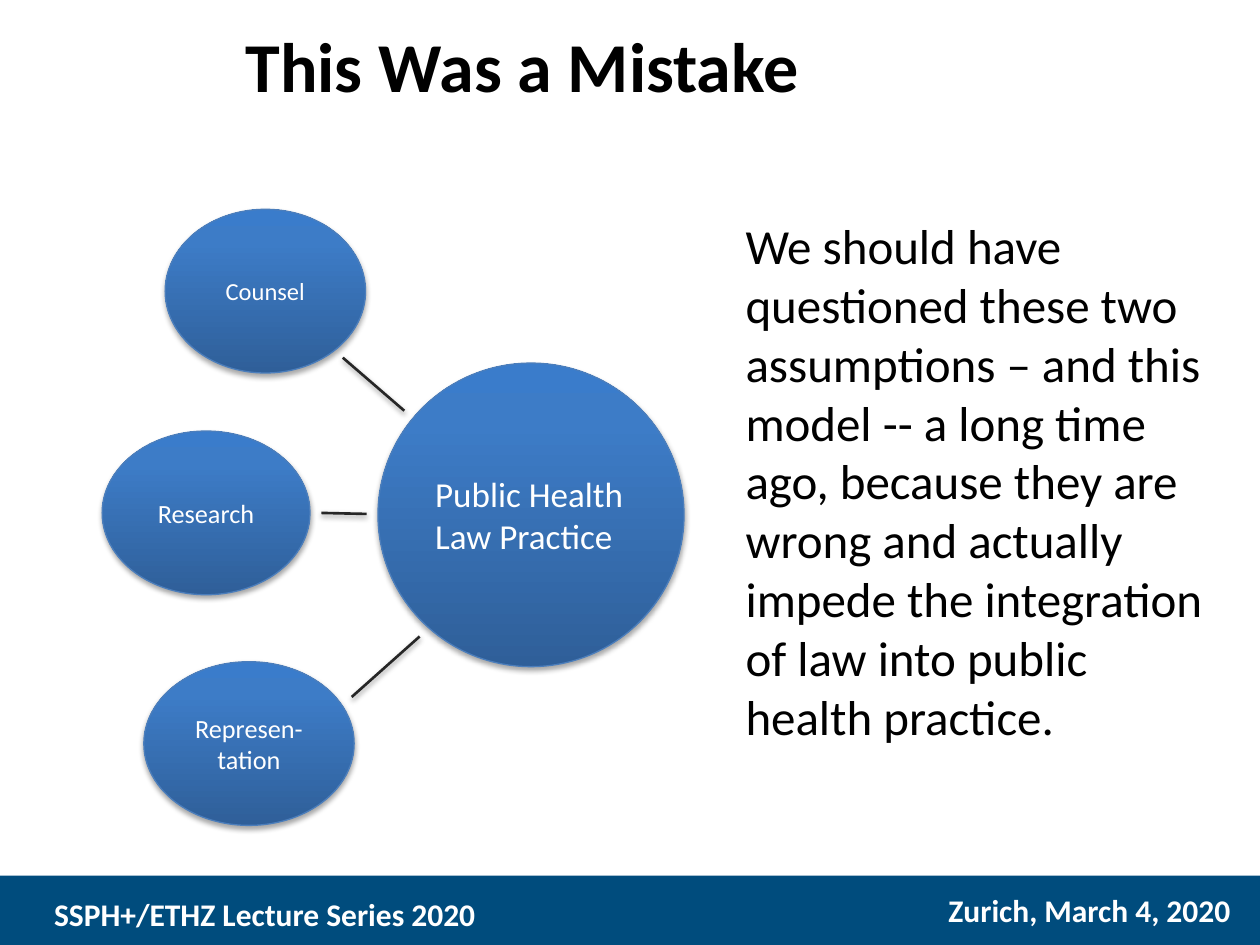
from dataclasses import dataclass

from copy import deepcopy
from lxml.etree import SubElement
from pptx import Presentation
from pptx.dml.color import RGBColor as RGB
from pptx.enum.shapes import MSO_CONNECTOR as CONN, MSO_SHAPE as SHAPE
from pptx.enum.text import MSO_ANCHOR as ANCHOR, MSO_AUTO_SIZE as AUTO, PP_ALIGN as ALIGN
from pptx.oxml.ns import qn
from pptx.util import Cm, Pt


@dataclass(frozen=True)
class Theme:
    font: str = "Calibri"
    white: RGB = RGB(0xFF, 0xFF, 0xFF)
    black: RGB = RGB(0, 0, 0)
    bar: RGB = RGB(0x00, 0x4C, 0x7D)
    outline: RGB = RGB(0x4B, 0x7E, 0xBC)
    link: RGB = RGB(0x26, 0x26, 0x26)
    gradient: tuple = ((0, "2F5F99"), (0.8, "3D7CC7"), (1, "3A7CCB"))
    title: int = 40
    body: int = 28
    hub: int = 20
    footer: int = 18


T = Theme()


def write(s, text, size, color, bold=False, align=ALIGN.LEFT):
    p = s.text_frame.paragraphs[0]
    p.alignment = align
    r = p.add_run()
    r.text = text
    f = r.font
    f.name, f.size, f.bold = T.font, Pt(size), bold
    f.color.rgb = color


def add_shadow(s, opacity, distance):
    """Give a shape or connector a soft shadow straight below; call after its line is set."""
    effects = SubElement(s._element.spPr, qn("a:effectLst"))
    shadow = SubElement(effects, qn("a:outerShdw"), blurRad=str(Pt(3.1)),
                        dist=str(Pt(distance)), dir="5400000", rotWithShape="0")
    color = SubElement(shadow, qn("a:srgbClr"), val="000000")
    SubElement(color, qn("a:alpha"), val=str(opacity * 1000))


prs = Presentation()
prs.slide_width, prs.slide_height = Cm(25.4), Cm(19.05)
slide = prs.slides.add_slide(prs.slide_layouts[5])
shapes = slide.shapes

# Footer bar
bar = shapes.add_shape(SHAPE.RECTANGLE, 0, Cm(17.65), prs.slide_width, Cm(1.4))
bar.shadow.inherit = False
bar.fill.solid()
bar.fill.fore_color.rgb = T.bar
bar.line.fill.background()

footers = [
    ("SSPH+/ETHZ Lecture Series 2020", 0.84, 17.91, 9.25),
    ("Zurich, March 4, 2020", 18.87, 17.83, 6.25),
]
for text, x, y, w in footers:
    s = shapes.add_textbox(Cm(x), Cm(y), Cm(w), Cm(1.02))
    s.text_frame.word_wrap = False
    s.text_frame.auto_size = AUTO.SHAPE_TO_FIT_TEXT
    write(s, text, T.footer, T.white, bold=True)

# Hub and its three roles: text, box, type size, alignment, side inset
circles = [
    ("Public Health Law Practice", (7.62, 7.32, 6.17, 6.12), T.hub, ALIGN.LEFT, 0.25),
    ("Counsel", (3.33, 4.22, 4.04, 3.3), 14, ALIGN.CENTER, 0),
    ("Research", (2.06, 8.69, 4.19, 3.3), 15, ALIGN.CENTER, 0.25),
    ("Represen-tation", (2.9, 13.34, 4.24, 3.3), 15, ALIGN.CENTER, 0.25),
]
for text, box, size, align, inset in circles:
    s = shapes.add_shape(SHAPE.OVAL, *map(Cm, box))
    s.fill.gradient()
    s.fill.gradient_angle = 90
    last_stop = s._element.spPr.findall(".//" + qn("a:gs"))[-1]
    last_stop.addnext(deepcopy(last_stop))
    for stop, (position, color) in zip(s.fill.gradient_stops, T.gradient):
        stop.position = position
        stop.color.rgb = RGB.from_string(color)
    s.line.color.rgb = T.outline
    s.line.width = Pt(0.75)
    add_shadow(s, 35, 1.8)
    tf = s.text_frame
    tf.word_wrap = True
    tf.vertical_anchor = ANCHOR.MIDDLE
    tf.margin_left = tf.margin_right = Cm(inset)
    write(s, text, size, T.white, align=align)

# Links from the hub to the roles
links = [
    (8.15, 8.28, 6.91, 7.21),
    (7.39, 10.36, 6.48, 10.34),
    (8.46, 12.83, 7.09, 14.05),
]
for ends in links:
    s = shapes.add_connector(CONN.STRAIGHT, *map(Cm, ends))
    s.line.color.rgb = T.link
    s.line.width = Pt(1.5)
    add_shadow(s, 38, 1.6)

# Commentary
s = shapes.add_textbox(Cm(14.78), Cm(4.22), Cm(10.08), Cm(12.22))
s.text_frame.word_wrap = True
write(s, "We should have questioned these two assumptions – and this model -- "
         "a long time ago, because they are wrong and actually impede the "
         "integration of law into public health practice.", T.body, T.black)

# Title
title = shapes.title
title.left, title.top, title.width, title.height = map(Cm, (4.7, 0.33, 13.54, 1.96))
tf = title.text_frame
tf.word_wrap = False
tf.auto_size = AUTO.SHAPE_TO_FIT_TEXT
tf.vertical_anchor = ANCHOR.TOP
write(title, "This Was a Mistake", T.title, T.black, bold=True)

prs.save("out.pptx")
